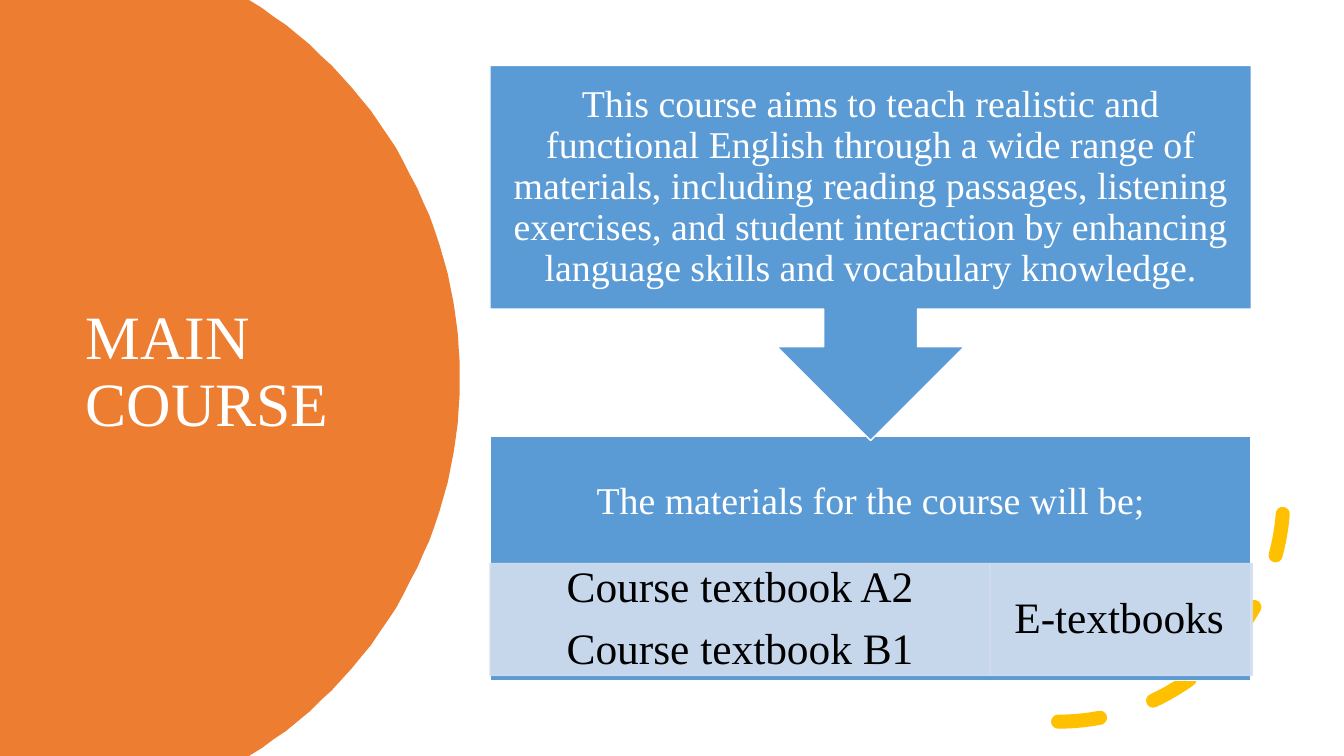
from dataclasses import dataclass
from math import asin, cos, sin

from lxml.etree import SubElement
from pptx import Presentation
from pptx.dml.color import RGBColor
from pptx.enum.dml import MSO_LINE
from pptx.enum.shapes import MSO_SHAPE
from pptx.enum.text import MSO_ANCHOR, PP_ALIGN
from pptx.oxml.ns import qn
from pptx.shapes.autoshape import Shape
from pptx.slide import Slide
from pptx.util import Pt

PX = 9144  # EMU in one px, 100 px to the inch
SLIDE_W, SLIDE_H = 1333, 750
FONT = "Times New Roman"
WHITE, BLACK = "FFFFFF", "000000"
ORANGE, YELLOW = "ED7D31", "FFC000"
BLUE, PALE_BLUE = "5B9BD5", "D2DEEF"


@dataclass(frozen=True)
class Panel:
    preset: MSO_SHAPE
    box: tuple[int, int, int, int]
    paragraphs: tuple[str, ...]
    size: int
    insets: tuple[int, int, int, int]
    fill: str = BLUE
    line: str = WHITE
    ink: str = WHITE
    opacity: int = 100
    align: PP_ALIGN = PP_ALIGN.CENTER


PANELS = (
    Panel(MSO_SHAPE.RECTANGLE, (486, 433, 755, 242),
          ("The materials for the course will be;",), 27, (21, 21, 21, 132)),
    Panel(MSO_SHAPE.RECTANGLE, (486, 559, 496, 111),
          ("Course textbook A2", "Course textbook B1"), 31, (24, 4, 24, 4),
          PALE_BLUE, PALE_BLUE, BLACK, 90),
    Panel(MSO_SHAPE.RECTANGLE, (982, 559, 260, 111),
          ("E-textbooks",), 31, (24, 4, 24, 4),
          PALE_BLUE, PALE_BLUE, BLACK, 90, PP_ALIGN.LEFT),
    Panel(MSO_SHAPE.DOWN_ARROW_CALLOUT, (486, 65, 755, 372),
          ("This course aims to teach realistic and functional English through "
           "a wide range of materials, including reading passages, listening "
           "exercises, and student interaction by enhancing language skills "
           "and vocabulary knowledge.",), 27, (21, 21, 21, 21)),
)


def rgb(colour: str) -> RGBColor:
    return RGBColor.from_string(colour)


def emu(lengths: tuple[int, ...]) -> list[int]:
    return [length * PX for length in lengths]


def write(shape: Shape, paragraphs: tuple[str, ...], size: int, ink: str,
          insets: tuple[int, int, int, int], align: PP_ALIGN,
          space_after: float = 0) -> None:
    frame = shape.text_frame
    frame.word_wrap = True
    frame.vertical_anchor = MSO_ANCHOR.MIDDLE
    (frame.margin_left, frame.margin_top,
     frame.margin_right, frame.margin_bottom) = emu(insets)
    for index, text in enumerate(paragraphs):
        paragraph = frame.add_paragraph() if index else frame.paragraphs[0]
        paragraph.alignment = align
        paragraph.line_spacing = 0.9
        paragraph.space_after = Pt(space_after)
        run = paragraph.add_run()
        run.text = text
        run.font.name = FONT
        run.font.size = Pt(size)
        run.font.color.rgb = rgb(ink)


def set_opacity(shape: Shape, percent: int) -> None:
    """Make fill and line equally see-through."""
    for colour in shape._element.spPr.iter(qn("a:srgbClr")):
        SubElement(colour, qn("a:alpha"), val=str(percent * 1000))


def add_disc(slide: Slide) -> None:
    """Fill the part of a large circle that lies on the slide's left side."""
    top_x, right_x, middle_y = 247, 456, SLIDE_H / 2
    depth = right_x - top_x
    radius = (depth ** 2 + middle_y ** 2) / (2 * depth)
    half_angle = asin(middle_y / radius)
    steps = 60
    angles = [half_angle * (2 * i / steps - 1) for i in range(steps + 1)]
    edge = [(right_x - radius + radius * cos(a), middle_y + radius * sin(a))
            for a in angles]
    builder = slide.shapes.build_freeform(0, 0, scale=PX)
    builder.add_line_segments([*edge, (0, SLIDE_H)], close=True)
    disc = builder.convert_to_shape()
    disc.shadow.inherit = False
    disc.fill.solid()
    disc.fill.fore_color.rgb = rgb(ORANGE)
    disc.line.fill.background()


def add_title(slide: Slide) -> None:
    title = slide.shapes.add_textbox(*emu((75, 126, 350, 488)))
    write(title, ("MAIN COURSE",), 44, WHITE, (10, 5, 10, 5), PP_ALIGN.LEFT)


def add_dashed_arc(slide: Slide) -> None:
    arc = slide.shapes.add_shape(MSO_SHAPE.ARC, *emu((826, 269, 447, 447)))
    arc.shadow.inherit = False
    arc.fill.background()
    arc.line.color.rgb = rgb(YELLOW)
    arc.line.width = Pt(10)
    arc.line.dash_style = MSO_LINE.DASH
    properties = arc._element.spPr
    properties.find(qn("a:ln")).set("cap", "rnd")
    properties.find(qn("a:xfrm")).set("flipV", "1")


def add_panel(slide: Slide, panel: Panel) -> None:
    shape = slide.shapes.add_shape(panel.preset, *emu(panel.box))
    shape.shadow.inherit = False
    shape.fill.solid()
    shape.fill.fore_color.rgb = rgb(panel.fill)
    shape.line.color.rgb = rgb(panel.line)
    shape.line.width = Pt(1)
    if panel.opacity < 100:
        set_opacity(shape, panel.opacity)
    write(shape, panel.paragraphs, panel.size, panel.ink, panel.insets,
          panel.align, space_after=round(panel.size * 0.35))


def main() -> None:
    deck = Presentation()
    deck.slide_width, deck.slide_height = emu((SLIDE_W, SLIDE_H))
    slide = deck.slides.add_slide(deck.slide_layouts[6])
    add_disc(slide)
    add_title(slide)
    add_dashed_arc(slide)
    for panel in PANELS:
        add_panel(slide, panel)
    deck.save("out.pptx")


if __name__ == "__main__":
    main()
